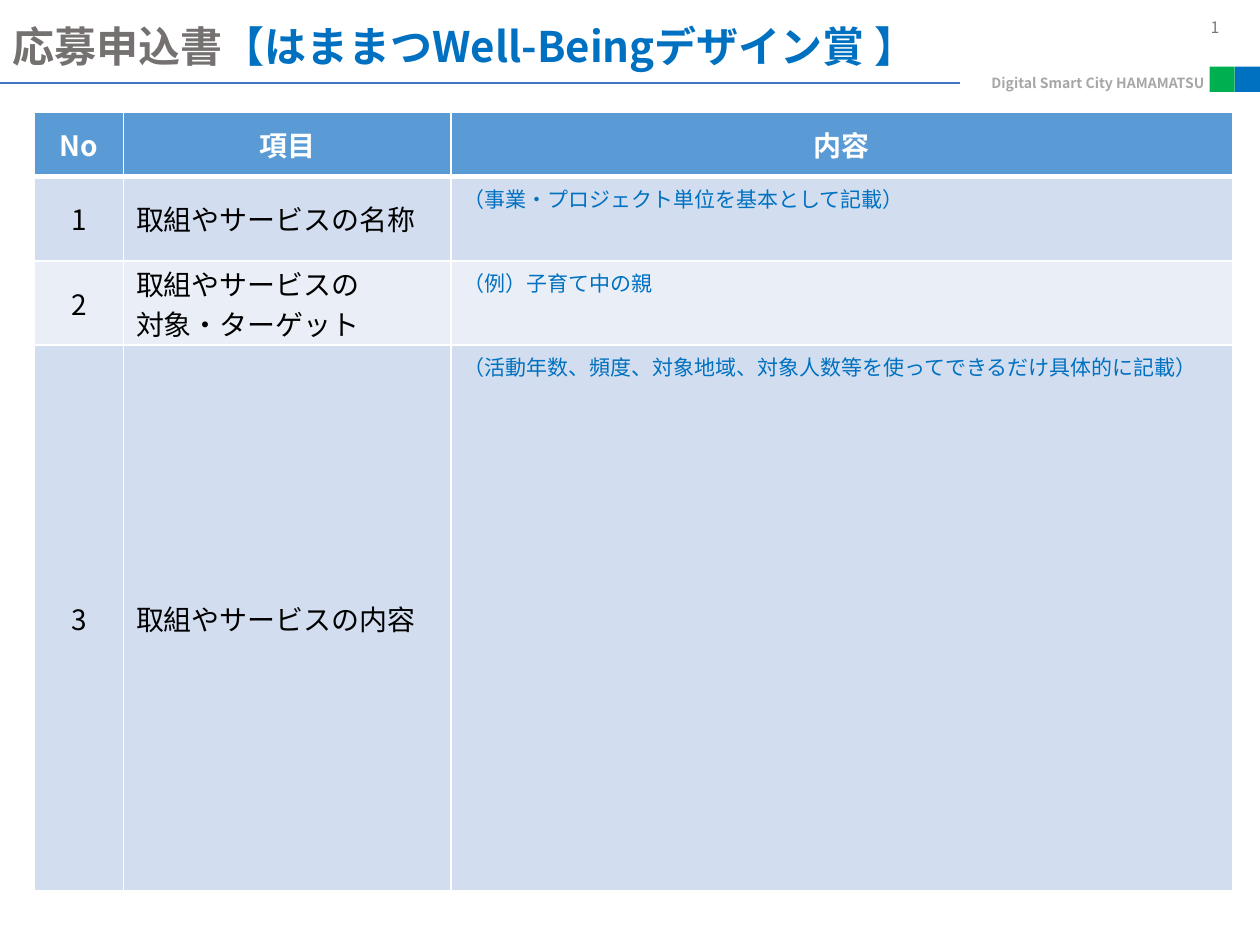
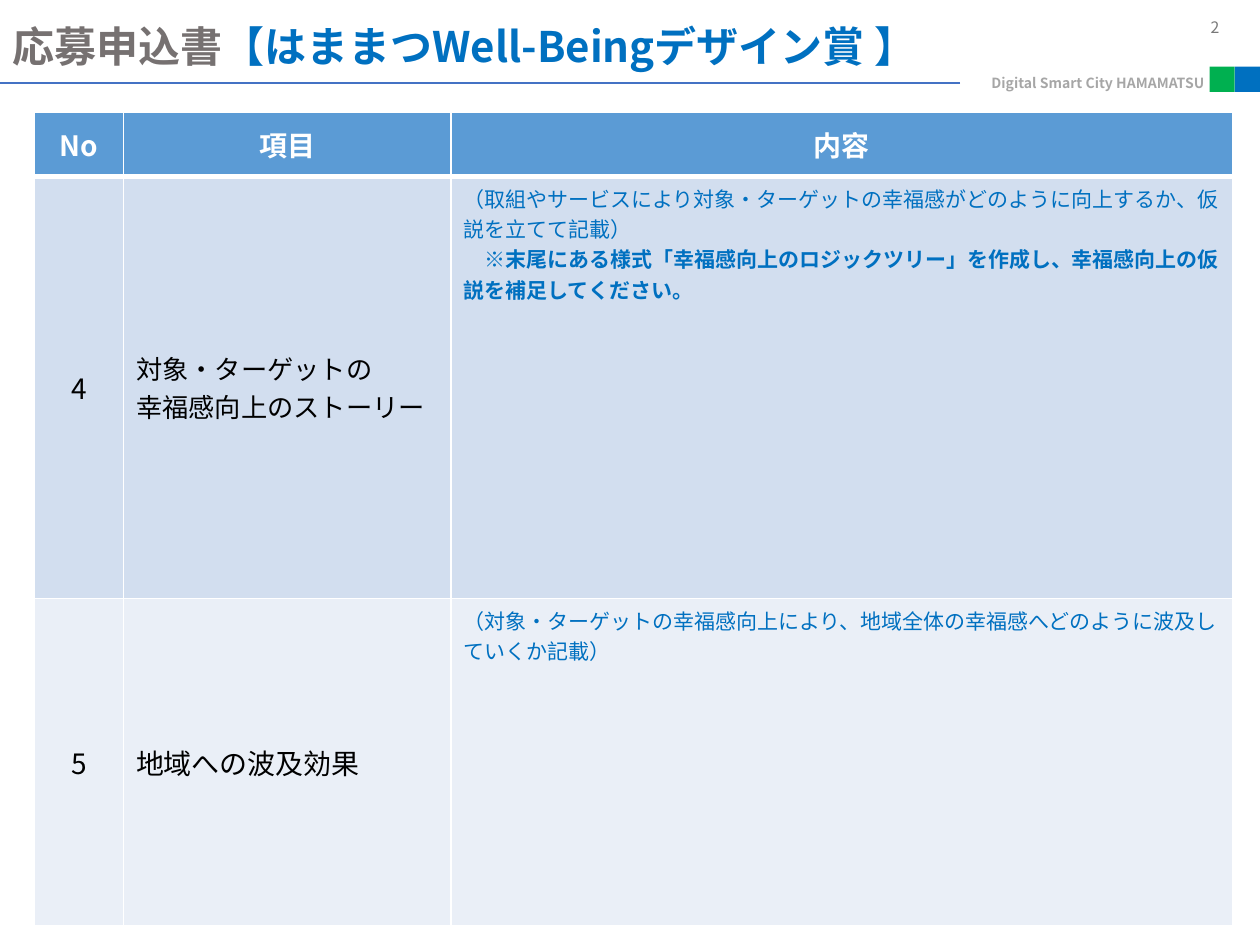
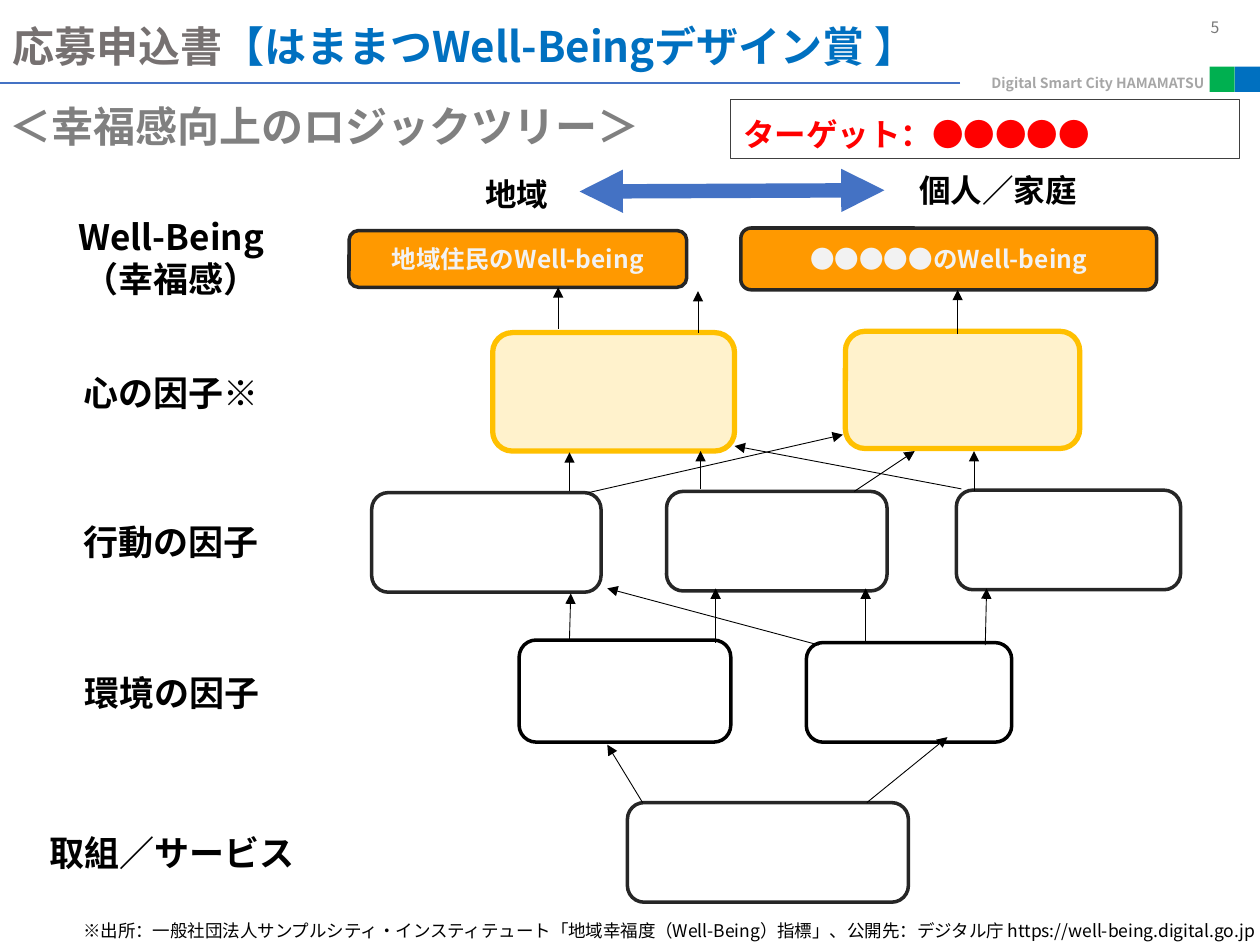
from lxml import etree
from pptx import Presentation
from pptx import util as u
from pptx.dml.color import RGBColor
from pptx.enum import shapes, text
from pptx.oxml import ns

FONT = "Noto Sans CJK JP"
COLUMNS, ROWS = 100, 75  # square grid cells on a 4:3 slide
COLORS = {
    "white": "FFFFFF", "black": "000000", "ink": "262626", "frame": "404040",
    "title": "767171", "subtitle": "808080", "tagline": "A6A6A6", "pale": "F2F2F2",
    "green": "00B050", "blue": "0070C0", "line": "4472C4", "red": "FF0000",
    "header": "5B9BD5", "band": "D2DEEF", "light_band": "EAEFF7",
    "orange": "FF9900", "amber": "FFC000", "cream": "FFF2CC",
}
LEFT, CENTER, RIGHT = text.PP_ALIGN.LEFT, text.PP_ALIGN.CENTER, text.PP_ALIGN.RIGHT
TOP, MIDDLE = text.MSO_ANCHOR.TOP, text.MSO_ANCHOR.MIDDLE
RECT, ROUNDED = shapes.MSO_SHAPE.RECTANGLE, shapes.MSO_SHAPE.ROUNDED_RECTANGLE


def rgb(name):
    return RGBColor.from_string(COLORS[name])


def add_xml(parent, tag, **attributes):
    return etree.SubElement(parent, ns.qn(tag), attributes)


class Deck:
    def __init__(self):
        self.prs = Presentation()
        self.prs.slide_width, self.prs.slide_height = u.Inches(10), u.Inches(7.5)
        self.slide = None

    def place(self, *lengths):
        """Turn grid lengths, alternately across and down, into slide lengths."""
        units = self.prs.slide_width / COLUMNS, self.prs.slide_height / ROWS
        return [round(length * units[i % 2]) for i, length in enumerate(lengths)]

    def begin(self, page):
        """Start a slide with the shared title, rule, tagline and page number."""
        self.slide = self.prs.slides.add_slide(self.prs.slide_layouts[6])
        for i, color in enumerate(("green", "blue")):
            self.box((96 + 2 * i, 5.3, 2, 2), fill=color, kind=RECT)
        self.label((68.1, 5.4, 28.5, 2.4), ["Digital Smart City HAMAMATSU"], 8, "tagline", RIGHT)
        self.line((76.2, 6.6), (0, 6.6), "line", 0.75)
        number = self.label((95.1, 0.9, 4.9, 4), [str(page)], 9, "frame", bold=False)
        for color in number._element.iter(ns.qn("a:srgbClr")):
            add_xml(color, "a:alpha", val="70000")
        heading = self.label((0, 1.1, 75.6, 5), ["応募申込書"], 24, "title")
        self.add_words(heading.text_frame.paragraphs[0],
                       "【はままつWell-Beingデザイン賞 】", 24, "blue", True)

    def add_words(self, paragraph, words, size, color, bold=False):
        run = paragraph.add_run()
        run.text = words
        run.font.size, run.font.bold = u.Pt(size), bold
        run.font.color.rgb = rgb(color)
        run.font.name = FONT
        add_xml(run._r.get_or_add_rPr(), "a:ea", typeface=FONT)

    def add_lines(self, frame, lines, size, color, align=LEFT, bold=False):
        """Fill a frame, one paragraph a line; a line may be (words, bold)."""
        for i, line in enumerate(lines):
            words, heavy = (line, bold) if isinstance(line, str) else line
            paragraph = frame.add_paragraph() if i else frame.paragraphs[0]
            paragraph.alignment = align
            self.add_words(paragraph, words, size, color, heavy)

    def label(self, at, lines, size, color="black", align=LEFT, bold=True):
        label = self.slide.shapes.add_textbox(*self.place(*at))
        label.text_frame.word_wrap = True
        self.add_lines(label.text_frame, lines, size, color, align, bold)
        return label

    def box(self, at, fill=None, edge=None, width=2, kind=ROUNDED):
        box = self.slide.shapes.add_shape(kind, *self.place(*at))
        box.shadow.inherit = False
        if fill:
            box.fill.solid()
            box.fill.fore_color.rgb = rgb(fill)
        else:
            box.fill.background()
        if edge:
            box.line.color.rgb = rgb(edge)
            box.line.width = u.Pt(width)
        else:
            box.line.fill.background()
        box.text_frame.word_wrap = True
        box.text_frame.vertical_anchor = MIDDLE
        return box

    def line(self, start, end, color="black", width=0.5, arrows=()):
        """Draw a line; arrows lists the a:headEnd / a:tailEnd tags wanted."""
        line = self.slide.shapes.add_connector(
            shapes.MSO_CONNECTOR.STRAIGHT, *self.place(*start, *end))
        line.line.color.rgb = rgb(color)
        line.line.width = u.Pt(width)
        for tag in arrows:
            add_xml(line.line._get_or_add_ln(), tag, type="triangle")
        add_xml(line._element.spPr, "a:effectLst")

    def cell(self, cell, lines, size, color, fill, align=LEFT, anchor=MIDDLE,
             bold=False, bottom_border=1):
        cell.vertical_anchor = anchor
        self.add_lines(cell.text_frame, lines, size, color, align, bold)
        properties = cell._tc.get_or_add_tcPr()
        for side in "LRTB":
            points = bottom_border if side == "B" else 1
            border = add_xml(properties, f"a:ln{side}", w=str(u.Pt(points)))
            add_xml(add_xml(border, "a:solidFill"), "a:srgbClr", val=COLORS["white"])
        cell.fill.solid()
        cell.fill.fore_color.rgb = rgb(fill)

    def form(self, entries, heights):
        """Draw the entry form; an entry is (number, item lines, hints, item size)."""
        widths, heights = (7.1, 26, 62), (5.1, *heights)
        table = self.slide.shapes.add_table(
            len(heights), len(widths),
            *self.place(2.7, 8.9, sum(widths), sum(heights))).table
        for column, width in zip(table.columns, widths):
            column.width = self.place(width)[0]
        for row, height in zip(table.rows, heights):
            row.height = self.place(0, height)[1]
        for i, name in enumerate(("No", "項目", "内容")):
            self.cell(table.cell(0, i), [name], 16, "white", "header", CENTER,
                      bold=True, bottom_border=3)
        for i, (number, item, hints, size) in enumerate(entries, 1):
            fill = "band" if i % 2 else "light_band"
            number_cell, item_cell, hint_cell = table.rows[i].cells
            self.cell(number_cell, [number], 16, "black", fill, CENTER)
            item_cell.margin_top = item_cell.margin_bottom = u.Inches(0.02)
            self.cell(item_cell, item, size, "black", fill)
            self.cell(hint_cell, hints, 12, "blue", fill, anchor=TOP)


def activity_form(deck):
    deck.begin(1)
    deck.form([
        ("1", ["取組やサービスの名称"], ["（事業・プロジェクト単位を基本として記載）"], 16),
        ("2", ["取組やサービスの", "対象・ターゲット"], ["（例）子育て中の親"], 16),
        ("3", ["取組やサービスの内容"],
         ["（活動年数、頻度、対象地域、対象人数等を使ってできるだけ具体的に記載）"], 16),
    ], (6.7, 6.7, 43.3))


def effect_form(deck):
    deck.begin(2)
    deck.form([
        ("4", ["対象・ターゲットの", "幸福感向上のストーリー"],
         ["（取組やサービスにより対象・ターゲットの幸福感がどのように向上するか、仮説を立てて記載）",
          ("　※末尾にある様式「幸福感向上のロジックツリー」を作成し、"
           "幸福感向上の仮説を補足してください。", True)], 15),
        ("5", ["地域への波及効果"],
         ["（対象・ターゲットの幸福感向上により、地域全体の幸福感へどのように波及していくか記載）"], 16),
    ], (33.5, 26))


def logic_tree(deck):
    deck.begin(5)
    deck.label((-0.5, 7.5, 52.5, 5), ["＜幸福感向上のロジックツリー＞"], 24, "subtitle", CENTER)
    target = deck.box((58, 7.9, 40.4, 4.7), edge="frame", width=0.75, kind=RECT)
    target.text_frame.margin_top = u.Inches(0.12)
    deck.add_lines(target.text_frame, ["ターゲット：●●●●●"], 18, "red", bold=True)

    for at, side in (((30.6, 13.4, 20.8, 4), "地域"), ((68.8, 13.1, 20.8, 4), "個人／家庭")):
        deck.label(at, [side], 18, align=CENTER)
    for at, level in (
        ((3.2, 16.6, 20.8, 7.7), ["Well-Being", "（幸福感）"]),
        ((2.5, 29, 22.2, 4.4), ["心の因子※"]),
        ((-0.2, 40.8, 27.6, 4.4), ["行動の因子"]),
        ((2.6, 52.8, 22.1, 4.4), ["環境の因子"]),
        ((2, 65.5, 23.3, 4.4), ["取組／サービス"]),
    ):
        deck.label(at, level, 20, align=CENTER)

    for at, goal in (((27.7, 18.3, 26.8, 4.5), "地域住民のWell-being"),
                     ((58.8, 18.1, 33, 4.9), "●●●●●のWell-being")):
        goal_box = deck.box(at, "orange", "ink")
        deck.add_lines(goal_box.text_frame, [goal], 14, "pale", CENTER, True)
    for heart in ((39.1, 26.4, 19.2, 9.4), (67.1, 26.3, 18.6, 9.3)):
        deck.box(heart, "cream", "amber", 3)
    for action in ((29.5, 39.1, 18.2, 7.9), (52.9, 39, 17.5, 7.9), (75.9, 38.9, 17.8, 7.9)):
        deck.box(action, edge="ink")
    for environment in ((41.2, 50.8, 16.8, 8.1), (64, 51, 16.3, 7.9)):
        deck.box(environment, edge="black")
    deck.box((49.8, 63.7, 22.3, 7.9), edge="ink")

    deck.line((46, 15.2), (70.2, 15.1), "line", 8.25, ("a:headEnd", "a:tailEnd"))
    heart_to_goal = [((44.3, 26.1), (44.3, 22.8)), ((55.4, 26.4), (55.4, 23.1)),
                     ((76, 26.5), (76, 23))]
    action_to_heart = [((45.2, 39), (45.2, 35.9)), ((46.7, 39.1), (66.9, 34.5)),
                       ((55.6, 38.8), (55.6, 35.8)), ((67.8, 39), (72.6, 35.8)),
                       ((76.3, 38.8), (58.3, 35.4)), ((77.3, 39), (77.3, 35.8))]
    environment_to_action = [((45.2, 50.7), (45.3, 47.1)), ((56.8, 51), (56.8, 46.7)),
                             ((65, 51.2), (48.2, 46.7)), ((68.7, 51), (68.7, 46.7)),
                             ((78.2, 51.2), (78.3, 46.7))]
    service_to_environment = [((51, 63.7), (48.2, 59.1)), ((68.8, 63.7), (75.2, 58.5))]
    for start, end in (heart_to_goal + action_to_heart
                       + environment_to_action + service_to_environment):
        deck.line(start, end, arrows=("a:tailEnd",))

    deck.label((-12.8, 72.5, 113.4, 2.7), [
        "※出所：一般社団法人サンプルシティ・インスティテュート「地域幸福度（Well-Being）指標」、"
        "公開先：デジタル庁 https://well-being.digital.go.jp"], 10, align=RIGHT, bold=False)


def main():
    deck = Deck()
    for build in (activity_form, effect_form, logic_tree):
        build(deck)
    deck.prs.save("out.pptx")


if __name__ == "__main__":
    main()
